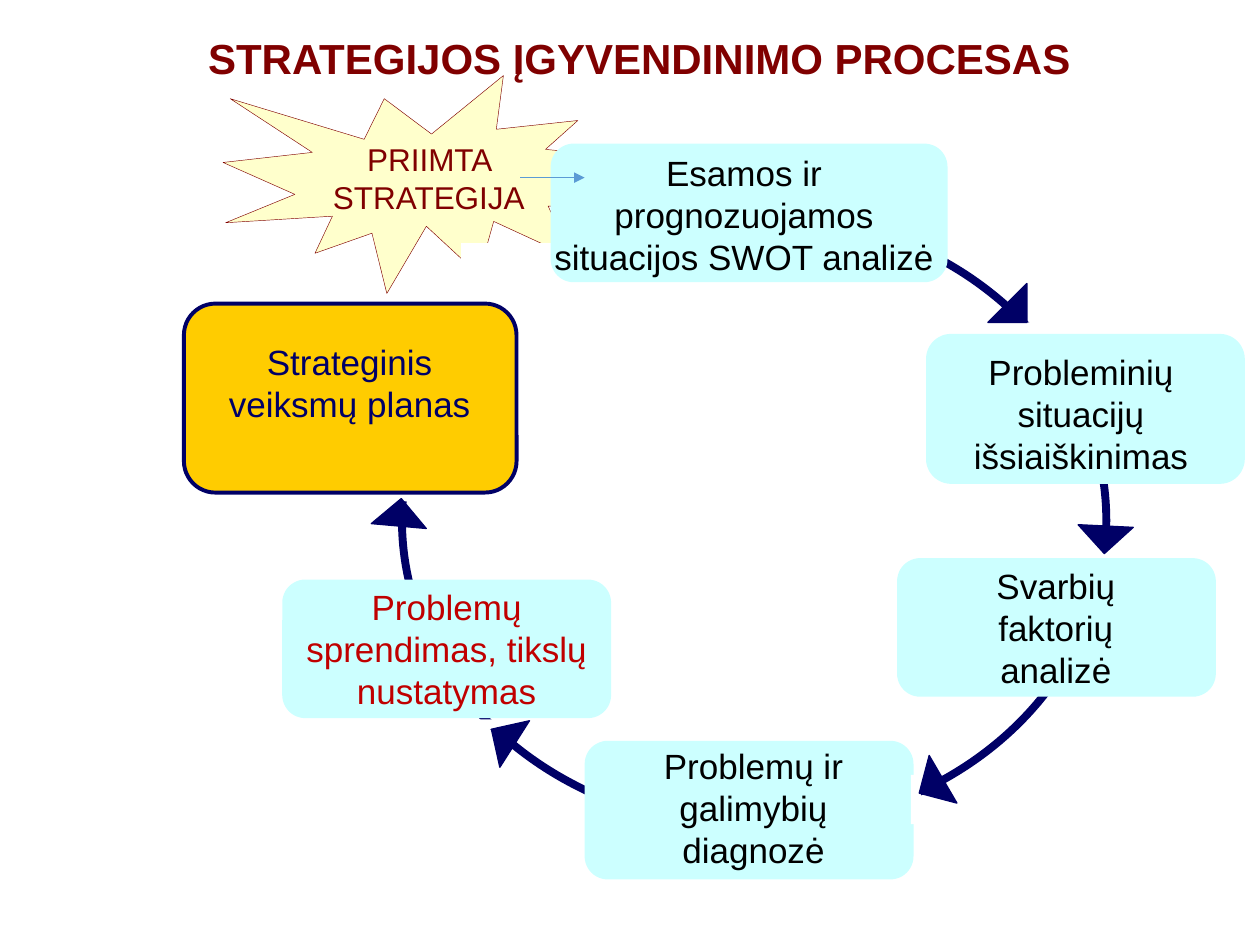
from dataclasses import dataclass

from lxml import etree
from pptx import Presentation
from pptx.dml.color import RGBColor
from pptx.enum.shapes import MSO_CONNECTOR, MSO_SHAPE
from pptx.enum.text import MSO_ANCHOR, PP_ALIGN
from pptx.oxml.ns import qn
from pptx.util import Inches, Pt

BURST = MSO_SHAPE.EXPLOSION1
RING = MSO_SHAPE.OVAL
STEP = MSO_SHAPE.FLOWCHART_ALTERNATE_PROCESS
ROUNDED = MSO_SHAPE.ROUNDED_RECTANGLE
RECTANGLE = MSO_SHAPE.RECTANGLE
TRIANGLE = MSO_SHAPE.ISOSCELES_TRIANGLE
STRAIGHT = MSO_CONNECTOR.STRAIGHT
CENTER = PP_ALIGN.CENTER
TOP, MIDDLE = MSO_ANCHOR.TOP, MSO_ANCHOR.MIDDLE
TITLE_ONLY = 5

# The page is a grid of square cells
COLUMNS, ROWS = 100, 75
CELL = Inches(10) / COLUMNS
HEAD_SIZE = 3.1


@dataclass(frozen=True)
class Theme:
    font: str = "Arial"
    title_size: int = 24
    step_size: int = 20
    burst_size: int = 18
    maroon: str = "800000"
    navy: str = "000066"
    red: str = "C00000"
    black: str = "000000"
    white: str = "FFFFFF"
    cream: str = "FFFFCC"
    aqua: str = "CCFFFF"
    gold: str = "FFCC00"
    blue: str = "5B9BD5"


THEME = Theme()

# Each step: box place, label place, colour, lines as (text, shift to the left)
LOWER_STEPS = [
    ((46.4, 58.8, 26.1, 11), (46.4, 58.6, 26.8, 11), THEME.black,
     [("Problemų ir", 0), ("galimybių", 8), ("diagnozė", 0)]),
    ((22.4, 46, 26.1, 11), (20.1, 46, 30.7, 11.3), THEME.red,
     [("Problemų", 0), ("sprendimas, tikslų nustatymas", 0)]),
]
UPPER_STEPS = [
    ((71.2, 44.3, 25.3, 11), (72.8, 44.3, 22, 11), THEME.black,
     [("Svarbių", 0), ("faktorių", 8.6), ("analizė", 0)]),
    ((43.7, 11.4, 31.5, 11), (42.9, 11.5, 32.3, 11), THEME.black,
     [("Esamos ir prognozuojamos situacijos SWOT analizė", 0)]),
    ((73.5, 26.5, 25.3, 11.9), (72.8, 27.3, 26, 11.1), THEME.black,
     [("Probleminių situacijų išsiaiškinimas", 0)]),
]
# White patches that cut the ring into arcs
GAPS = [
    (80.7, 25.6, 3.2, 1.6), (85.4, 43.6, 4.7, 0.8), (72.3, 61.5, 0.8, 3.9),
    (36.6, 57.1, 4.7, 0.8), (30.3, 38.2, 4.7, 1.6), (36.6, 19.3, 9.5, 7.9),
]
# Arrowheads on the ring: left, top, rotation
HEADS = [
    (78.4, 22.5, 0), (86.2, 40.2, 47.8), (73.3, 60.3, 104.8),
    (39.3, 57.5, 167.5), (30.1, 40.2, 230.1),
]


def cells(*counts):
    return [round(count * CELL) for count in counts]


def color(value):
    return RGBColor.from_string(value)


def add_box(page, kind, place, fill=None, line=None, width=0.75):
    box = page.shapes.add_shape(kind, *cells(*place))
    box.shadow.inherit = False
    if fill:
        box.fill.solid()
        box.fill.fore_color.rgb = color(fill)
    else:
        box.fill.background()
    if line:
        box.line.color.rgb = color(line)
        box.line.width = Pt(width)
    else:
        box.line.fill.background()
    return box


def write(box, lines, size, ink, bold=False, anchor=TOP):
    frame = box.text_frame
    frame.word_wrap = True
    frame.vertical_anchor = anchor
    for index, (text, shift) in enumerate(lines):
        para = frame.add_paragraph() if index else frame.paragraphs[0]
        para.alignment = CENTER
        para.line_spacing = 1
        para.space_before = Pt(0)
        if shift:
            properties = para._p.get_or_add_pPr()
            properties.set("marL", "0")
            properties.set("indent", str(-cells(shift)[0]))
        span = para.add_run()
        span.text = text
        span.font.name = THEME.font
        span.font.size = Pt(size)
        span.font.bold = bold
        span.font.color.rgb = color(ink)


def add_label(page, place, lines, ink):
    label = page.shapes.add_textbox(*cells(*place))
    write(label, lines, THEME.step_size, ink)


def add_steps(page, steps):
    for box_place, label_place, ink, lines in steps:
        add_box(page, STEP, box_place, THEME.aqua)
        add_label(page, label_place, lines, ink)


def add_ring(page):
    add_box(page, RING, (31.9, 16.9, 55.9, 48.8), line=THEME.navy, width=4.5)


def add_heads(page):
    for left, top, rotation in HEADS:
        head = add_box(page, TRIANGLE, (left, top, HEAD_SIZE, HEAD_SIZE),
                       THEME.navy, THEME.navy)
        head.adjustments[0] = 1
        head.rotation = rotation


def add_arrow(page, start, end):
    arrow = page.shapes.add_connector(STRAIGHT, *cells(*start, *end))
    arrow.line.color.rgb = color(THEME.blue)
    arrow.line.width = Pt(0.5)
    etree.SubElement(arrow.line._get_or_add_ln(), qn("a:tailEnd"), type="triangle")
    etree.SubElement(arrow._element.spPr, qn("a:effectLst"))


def add_title(page, text):
    title = page.shapes.title
    title.left, title.top, title.width, title.height = cells(9, 2.1, 83.5, 5)
    write(title, [(text, 0)], THEME.title_size, THEME.maroon, bold=True)


def main():
    deck = Presentation()
    deck.slide_width, deck.slide_height = cells(COLUMNS, ROWS)
    page = deck.slides.add_slide(deck.slide_layouts[TITLE_ONLY])
    add_title(page, "STRATEGIJOS ĮGYVENDINIMO PROCESAS")

    # Starting point
    burst = add_box(page, BURST, (17.7, 6, 33.1, 17.3), THEME.cream, THEME.maroon, 0.25)
    write(burst, [("PRIIMTA STRATEGIJA", 0)], THEME.burst_size, THEME.maroon,
          anchor=MIDDLE)

    # Cycle of steps
    add_ring(page)
    add_steps(page, LOWER_STEPS)
    for place in GAPS:
        add_box(page, RECTANGLE, place, THEME.white)
    add_heads(page)
    add_steps(page, UPPER_STEPS)

    # Resulting plan
    add_box(page, ROUNDED, (14.6, 24.1, 26.4, 15), THEME.gold, THEME.navy, 2.25)
    add_label(page, (15.7, 26.5, 24.1, 7.7), [("Strateginis veiksmų planas", 0)], THEME.navy)

    add_arrow(page, (41.3, 14.1), (46.4, 14.1))
    deck.save("out.pptx")


if __name__ == "__main__":
    main()
